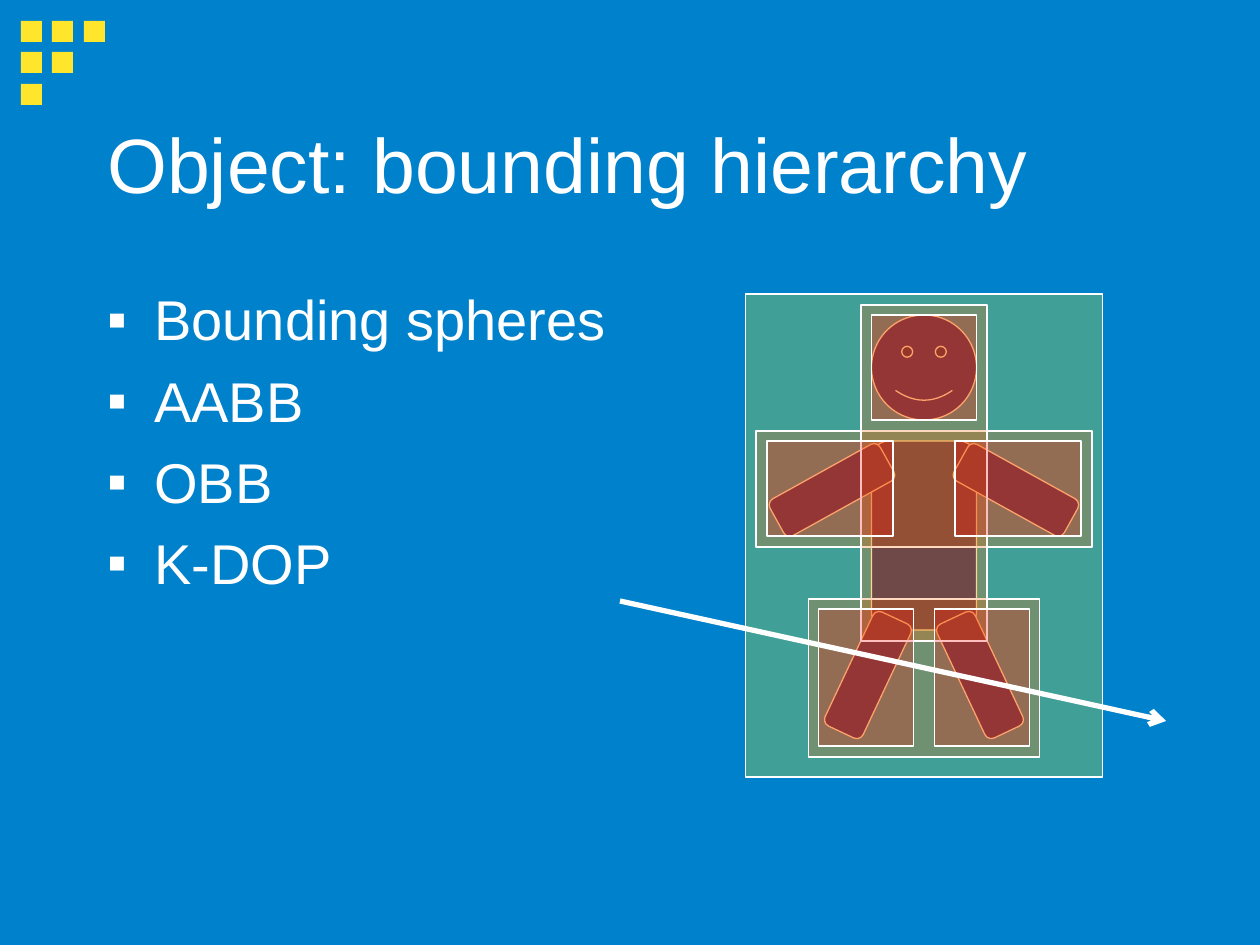
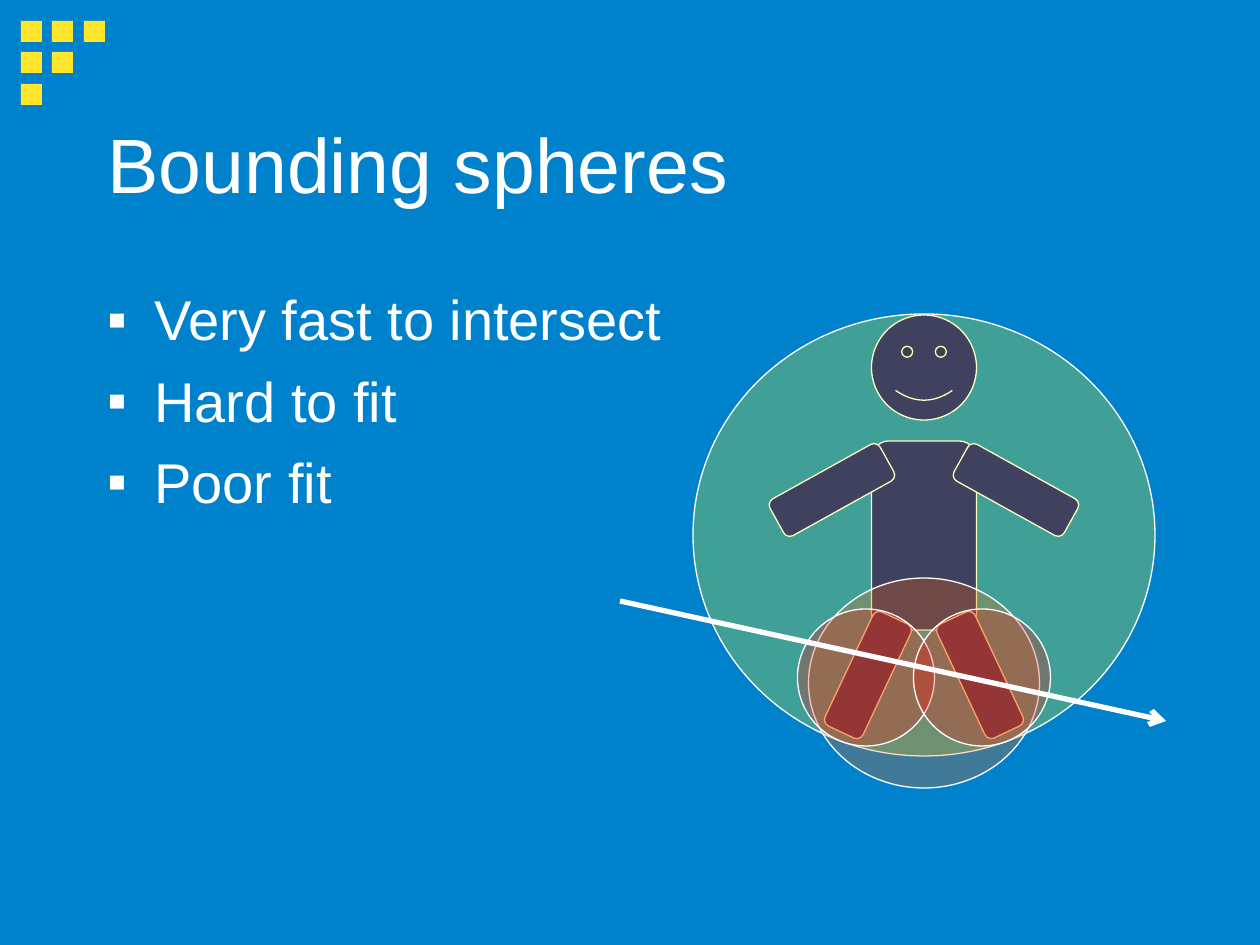
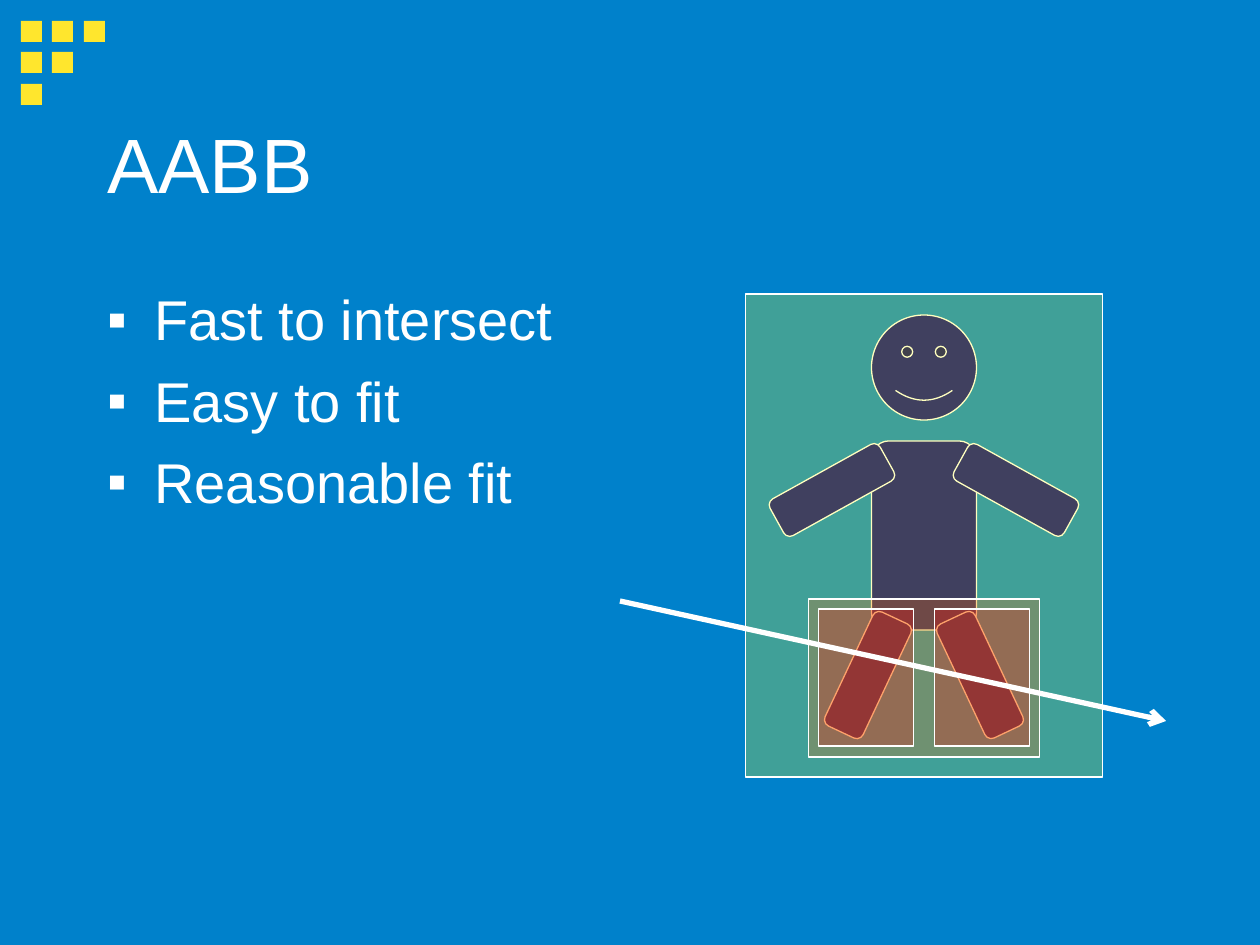
from lxml import etree
from pptx import Presentation
from pptx.dml.color import RGBColor
from pptx.enum.shapes import MSO_CONNECTOR, MSO_SHAPE
from pptx.enum.text import MSO_ANCHOR
from pptx.oxml.ns import qn
from pptx.util import Emu, Pt

RECT, ROUND = MSO_SHAPE.RECTANGLE, MSO_SHAPE.ROUNDED_RECTANGLE
OVAL, FACE = MSO_SHAPE.OVAL, MSO_SHAPE.SMILEY_FACE
STRAIGHT = MSO_CONNECTOR.STRAIGHT
TOP, MIDDLE = MSO_ANCHOR.TOP, MSO_ANCHOR.MIDDLE

BLUE = RGBColor(0x00, 0x81, 0xCB)
GOLD = RGBColor(0xFF, 0xE6, 0x2D)
WHITE = RGBColor(0xFF, 0xFF, 0xFF)
NAVY = RGBColor(0x00, 0x00, 0x80)
YELLOW = RGBColor(0xFF, 0xFF, 0x00)
ORANGE = RGBColor(0xFF, 0x66, 0x00)
RED = RGBColor(0xFF, 0x00, 0x00)

# Parts are (offset of the centre from AXIS, top, width, height);
# a part with an offset is drawn on both sides of the axis.
AXIS = 924
BODY = [  # preset, part, turn
    (FACE, (0, 315, 105, 105), 0),
    (ROUND, (0, 441, 105, 189), 0),
    (ROUND, (92, 469, 126, 42), 29),
    (ROUND, (56, 654, 126, 42), 64.8),
]
WHOLE = (YELLOW, (0, 294, 357, 483))
ARMS = (ORANGE, (0, 431, 336, 116))
LEGS = (ORANGE, (0, 599, 231, 158))
TRUNK = (ORANGE, (0, 305, 126, 336))
LEG = (RED, (58, 609, 95, 137))
ARM = (RED, (94, 441, 126, 95))
HEAD = (RED, (0, 315, 105, 105))
BALLS = [
    (YELLOW, (0, 314, 462, 442)),
    (ORANGE, (0, 578, 231, 210)),
    (RED, (58, 609, 137, 137)),
]
RAY = (620, 601, 1166, 721)

SLIDES = [  # title, bullets, preset of the bounds, bounds
    ("Object: bounding hierarchy",
     ["Bounding spheres", "AABB", "OBB", "K-DOP"],
     RECT, [WHOLE, ARMS, LEGS, TRUNK, LEG, ARM, HEAD]),
    ("Bounding spheres",
     ["Very fast to intersect", "Hard to fit", "Poor fit"],
     OVAL, BALLS),
    ("AABB",
     ["Fast to intersect", "Easy to fit", "Reasonable fit"],
     RECT, [WHOLE, LEGS, LEG]),
]


def px(n):
    return Emu(round(n * 914400 / 126))


def add_text(slide, lines, box, size, anchor=TOP, inset=6, bullet=None, gap=0):
    frame = slide.shapes.add_textbox(*map(px, box)).text_frame
    frame.word_wrap = True
    frame.vertical_anchor = anchor
    frame.margin_top = px(inset)
    for i, line in enumerate(lines):
        para = frame.paragraphs[0] if i == 0 else frame.add_paragraph()
        if i:
            para.space_before = Pt(gap)
        if bullet:
            props = para._p.get_or_add_pPr()
            props.set("marL", str(px(47)))
            props.set("indent", str(px(-47)))
            etree.SubElement(props, qn("a:buFont"), typeface="Arial")
            etree.SubElement(props, qn("a:buChar"), char=bullet)
        run = para.add_run()
        run.text = line
        run.font.name = "Arial"
        run.font.size = Pt(size)
        run.font.color.rgb = WHITE


def add_shape(slide, kind, box, fill, alpha=None, edge=True, turn=0):
    shape = slide.shapes.add_shape(kind, *map(px, box))
    shape.shadow.inherit = False
    shape.rotation = turn
    shape.fill.solid()
    shape.fill.fore_color.rgb = fill
    if alpha:
        tint = shape._element.spPr.find(qn("a:solidFill"))[0]
        etree.SubElement(tint, qn("a:alpha"), val=str(alpha * 1000))
    if edge:
        shape.line.color.rgb = WHITE
        shape.line.width = Pt(0.75)
    else:
        shape.line.fill.background()


def add_part(slide, kind, part, fill, alpha=None, turn=0):
    """Draw a part centred on the axis, or mirrored on its two sides."""
    shift, top, wide, high = part
    for side in (-1, 1) if shift else (1,):
        left = AXIS + side * shift - wide / 2
        add_shape(slide, kind, (left, top, wide, high), fill,
                  alpha=alpha, turn=side * turn)


def add_ray(slide):
    ray = slide.shapes.add_connector(STRAIGHT, *map(px, RAY))
    ray.line.color.rgb = WHITE
    ray.line.width = Pt(3)
    etree.SubElement(ray.line._get_or_add_ln(), qn("a:tailEnd"), type="arrow")
    etree.SubElement(ray._element.spPr, qn("a:effectLst"))


def add_corner(slide):
    """Draw the triangle of small squares at the top left."""
    for row in range(3):
        for col in range(3 - row):
            box = (21 + 63 * col // 2, 21 + 63 * row // 2, 21, 21)
            add_shape(slide, RECT, box, GOLD, edge=False)


def main():
    deck = Presentation()
    deck.slide_width, deck.slide_height = px(1260), px(945)
    back = deck.slide_master.background.fill
    back.solid()
    back.fore_color.rgb = BLUE
    for title, points, kind, bounds in SLIDES:
        slide = deck.slides.add_slide(deck.slide_layouts[6])
        add_corner(slide)
        add_text(slide, [title], (95, 84, 1071, 158), 44, anchor=MIDDLE)
        add_text(slide, points, (95, 273, 1071, 567), 32,
                 inset=12, bullet="▪", gap=8)
        for shape, part, turn in BODY:
            add_part(slide, shape, part, NAVY, turn=turn)
        for fill, part in bounds:
            add_part(slide, kind, part, fill, alpha=25)
        add_ray(slide)
    deck.save("out.pptx")


if __name__ == "__main__":
    main()
